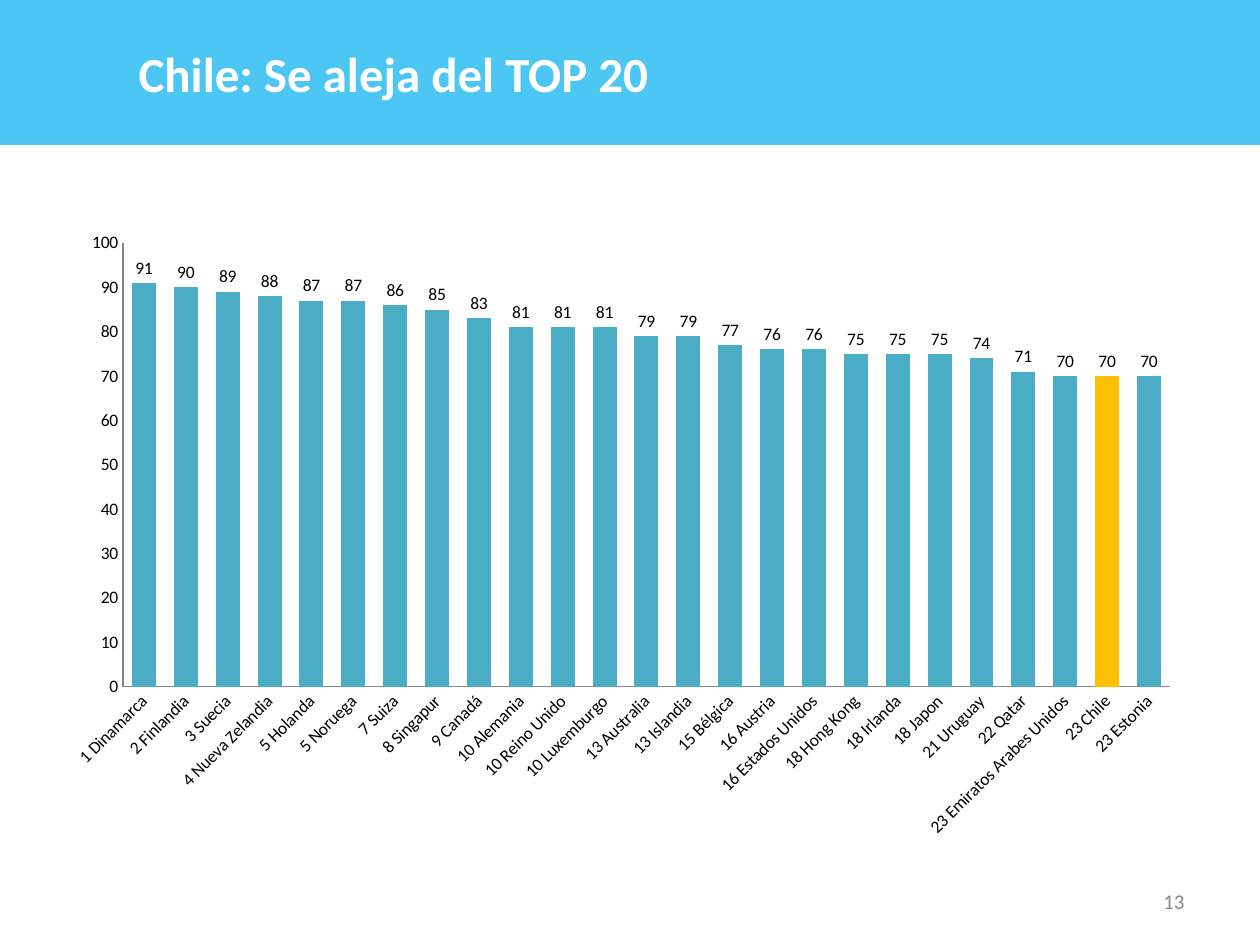
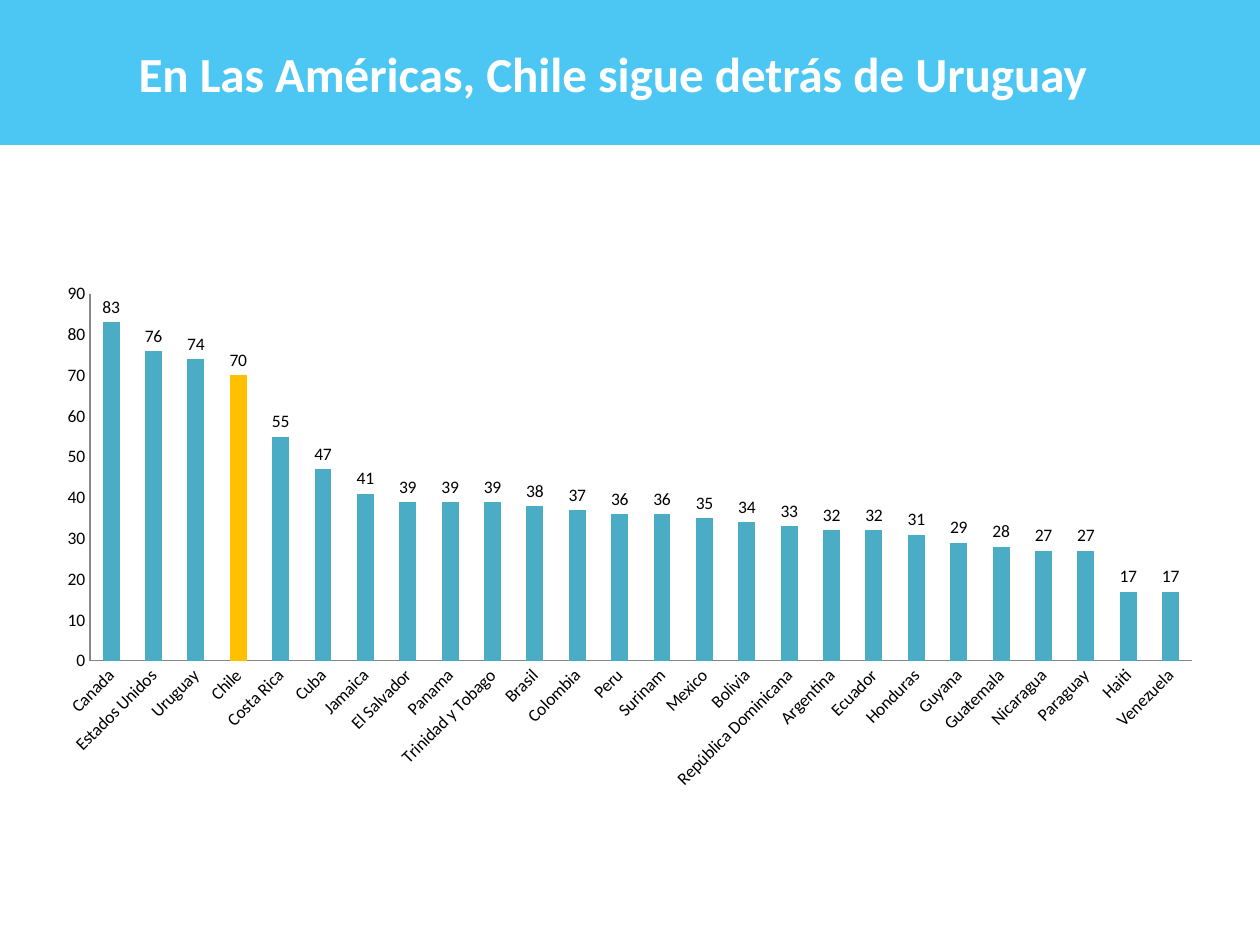
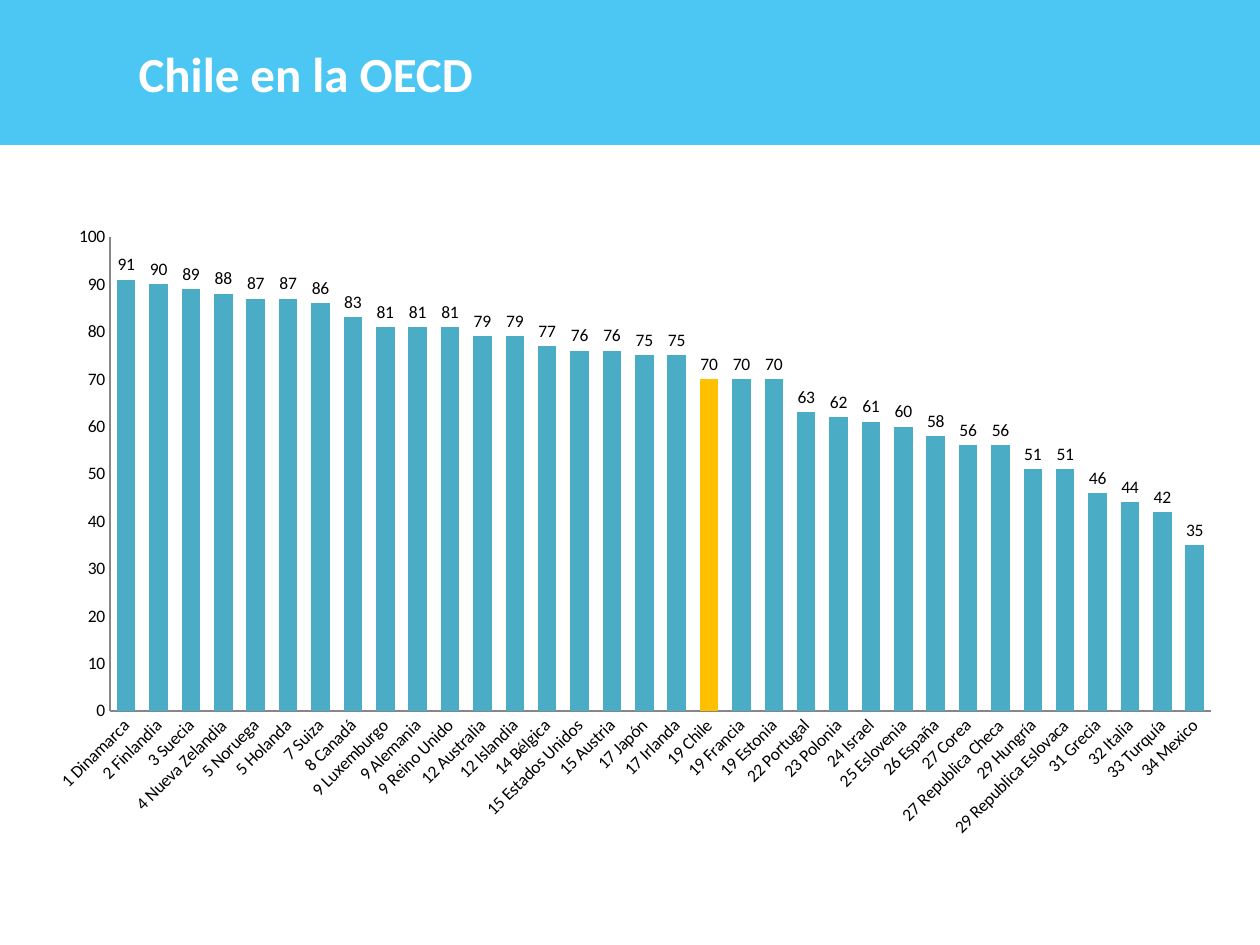
"""Build three slides of ranked country scores with Chile highlighted."""
import dataclasses

import pptx
import pptx.chart.data
import pptx.dml.color
import pptx.enum.chart
import pptx.enum.dml
import pptx.enum.text
import pptx.oxml
import pptx.oxml.ns
import pptx.util

Pt = pptx.util.Pt
RGB = pptx.dml.color.RGBColor.from_string
qn = pptx.oxml.ns.qn

SLIDES = [
    dict(
        title="Chile: Se aleja del TOP 20",
        number="13",
        frame=(30.2, 126, 651.6, 360),
        plot=(70.3, 138.9, 598.3, 253.5),
        top=100,
        gap=75,
        scores=[
            ("1 Dinamarca", 91), ("2 Finlandia", 90), ("3 Suecia", 89),
            ("4 Nueva Zelandia", 88), ("5 Holanda", 87), ("5 Noruega", 87),
            ("7 Suiza", 86), ("8 Singapur", 85), ("9 Canadá", 83),
            ("10 Alemania", 81), ("10 Reino Unido", 81), ("10 Luxemburgo", 81),
            ("13 Australia", 79), ("13 Islandia", 79), ("15 Bélgica", 77),
            ("16 Austria", 76), ("16 Estados Unidos", 76), ("18 Hong Kong", 75),
            ("18 Irlanda", 75), ("18 Japon", 75), ("21 Uruguay", 74),
            ("22 Qatar", 71), ("23 Emiratos Arabes Unidos", 70),
            ("23 Chile", 70), ("23 Estonia", 70),
        ],
    ),
    dict(
        title="En Las Américas, Chile sigue detrás de Uruguay",
        number=None,
        frame=(25.2, 157, 668.9, 300.2),
        plot=(51.4, 168, 629.7, 209.7),
        top=90,
        gap=150,
        scores=[
            ("Canada", 83), ("Estados Unidos", 76), ("Uruguay", 74),
            ("Chile", 70), ("Costa Rica", 55), ("Cuba", 47), ("Jamaica", 41),
            ("El Salvador", 39), ("Panama", 39), ("Trinidad y Tobago", 39),
            ("Brasil", 38), ("Colombia", 37), ("Peru", 36), ("Surinam", 36),
            ("Mexico", 35), ("Bolivia", 34), ("República Dominicana", 33),
            ("Argentina", 32), ("Ecuador", 32), ("Honduras", 31),
            ("Guyana", 29), ("Guatemala", 28), ("Nicaragua", 27),
            ("Paraguay", 27), ("Haiti", 17), ("Venezuela", 17),
        ],
    ),
    dict(
        title="Chile en la OECD",
        number=None,
        frame=(20.2, 122.4, 686.2, 362.9),
        plot=(62.9, 135.4, 629.1, 270.9),
        top=100,
        gap=75,
        scores=[
            ("1 Dinamarca", 91), ("2 Finlandia", 90), ("3 Suecia", 89),
            ("4 Nueva Zelandia", 88), ("5 Noruega", 87), ("5 Holanda", 87),
            ("7 Suiza", 86), ("8 Canadá", 83), ("9 Luxemburgo", 81),
            ("9 Alemania", 81), ("9 Reino Unido", 81), ("12 Australia", 79),
            ("12 Islandia", 79), ("14 Bélgica", 77), ("15 Estados Unidos", 76),
            ("15 Austria", 76), ("17 Japón", 75), ("17 Irlanda", 75),
            ("19 Chile", 70), ("19 Francia", 70), ("19 Estonia", 70),
            ("22 Portugal", 63), ("23 Polonia", 62), ("24 Israel", 61),
            ("25 Eslovenia", 60), ("26 España", 58), ("27 Corea", 56),
            ("27 Republica Checa", 56), ("29 Hungría", 51),
            ("29 Republica Eslovaca", 51), ("31 Grecia", 46),
            ("32 Italia", 44), ("33 Turquía", 42), ("34 Mexico", 35),
        ],
    ),
]


@dataclasses.dataclass(frozen=True)
class Theme:
    font: str = "Calibri"
    band: str = "00B0F0"
    band_alpha: int = 70
    title: str = "FFFFFF"
    bar: str = "4BACC6"
    highlight: str = "FFC000"
    axis: str = "868686"
    text: str = "000000"
    number: str = "898989"
    title_size: int = 28
    chart_size: int = 10
    number_size: int = 12


THEME = Theme()
ALIGN = pptx.enum.text.PP_ALIGN


def place(sp, left, top, width, height):
    sp.left, sp.top, sp.width, sp.height = map(Pt, (left, top, width, height))


def write(sp, text, *, size, color, bold=False, align=ALIGN.LEFT, inset=7.2):
    tf = sp.text_frame
    tf.word_wrap = True
    tf.auto_size = pptx.enum.text.MSO_AUTO_SIZE.NONE
    tf.vertical_anchor = pptx.enum.text.MSO_ANCHOR.MIDDLE
    tf.margin_left = Pt(inset)
    p = tf.paragraphs[0]
    p.alignment = align
    r = p.add_run()
    r.text = text
    r.font.name, r.font.size, r.font.bold = THEME.font, Pt(size), bold
    r.font.color.rgb = RGB(color)


def add_band(s, text):
    sp = s.shapes.title
    place(sp, 0, 0, 720, 82.8)
    sp.fill.solid()
    sp.fill.fore_color.rgb = RGB(THEME.band)
    color = next(sp._element.spPr.iter(qn("a:srgbClr")))
    alpha = color.makeelement(qn("a:alpha"), {"val": str(THEME.band_alpha * 1000)})
    color.append(alpha)
    write(sp, text, size=THEME.title_size, color=THEME.title, bold=True, inset=79.2)


def set_plot_area(chart, frame, plot):
    left, top, width, height = frame
    x, y, w, h = plot
    values = dict(x=(x - left) / width, y=(y - top) / height, w=w / width, h=h / height)
    settings = dict(layoutTarget="inner", xMode="edge", yMode="edge", **values)
    area = chart._chartSpace.chart.plotArea
    for old in area.findall(qn("c:layout")):
        area.remove(old)
    layout = area.makeelement(qn("c:layout"), {})
    manual = layout.makeelement(qn("c:manualLayout"), {})
    for name, value in settings.items():
        manual.append(manual.makeelement(qn("c:" + name), {"val": str(value)}))
    layout.append(manual)
    area.insert(0, layout)


def style_axis(axis):
    axis.has_major_gridlines = False
    axis.major_tick_mark = axis.minor_tick_mark = pptx.enum.chart.XL_TICK_MARK.NONE
    axis.format.line.color.rgb = RGB(THEME.axis)
    axis.format.line.width = Pt(0.75)
    axis.tick_labels.font.size = Pt(THEME.chart_size)


def add_scores(s, scores, frame, plot, top, gap):
    data = pptx.chart.data.CategoryChartData(number_format="0")
    data.categories = [name for name, _ in scores]
    data.add_series("Series 1", [score for _, score in scores])
    kind = pptx.enum.chart.XL_CHART_TYPE.COLUMN_CLUSTERED
    chart = s.shapes.add_chart(kind, *map(Pt, frame), data).chart
    chart.has_legend = chart.has_title = False
    chart.font.name, chart.font.size = THEME.font, Pt(THEME.chart_size)
    chart.font.color.rgb = RGB(THEME.text)
    set_plot_area(chart, frame, plot)

    for axis in (chart.category_axis, chart.value_axis):
        style_axis(axis)
    body = next(chart.category_axis._element.iter(qn("a:bodyPr")))
    body.set("rot", "-2700000")
    chart.value_axis.minimum_scale = 0
    chart.value_axis.maximum_scale = top
    chart.value_axis.major_unit = 10

    bars = chart.plots[0]
    bars.gap_width = gap
    bars.vary_by_categories = False
    bars.has_data_labels = True
    bars.data_labels.show_value = True
    bars.data_labels.position = pptx.enum.chart.XL_LABEL_POSITION.OUTSIDE_END
    series = bars.series[0]
    series.invert_if_negative = False
    chile = next(i for i, (name, _) in enumerate(scores) if name.endswith("Chile"))
    for item, color in ((series, THEME.bar), (series.points[chile], THEME.highlight)):
        item.format.fill.solid()
        item.format.fill.fore_color.rgb = RGB(color)


def add_number(s, text):
    sp = s.shapes.add_textbox(*map(Pt, (516, 500.4, 168, 28.8)))
    write(sp, text, size=THEME.number_size, color=THEME.number, align=ALIGN.RIGHT)


def main():
    prs = pptx.Presentation()
    prs.slide_width, prs.slide_height = Pt(720), Pt(540)
    for item in SLIDES:
        s = prs.slides.add_slide(prs.slide_layouts[5])
        add_band(s, item["title"])
        add_scores(s, item["scores"], item["frame"], item["plot"], item["top"], item["gap"])
        if item["number"]:
            add_number(s, item["number"])
    prs.save("out.pptx")


if __name__ == "__main__":
    main()
